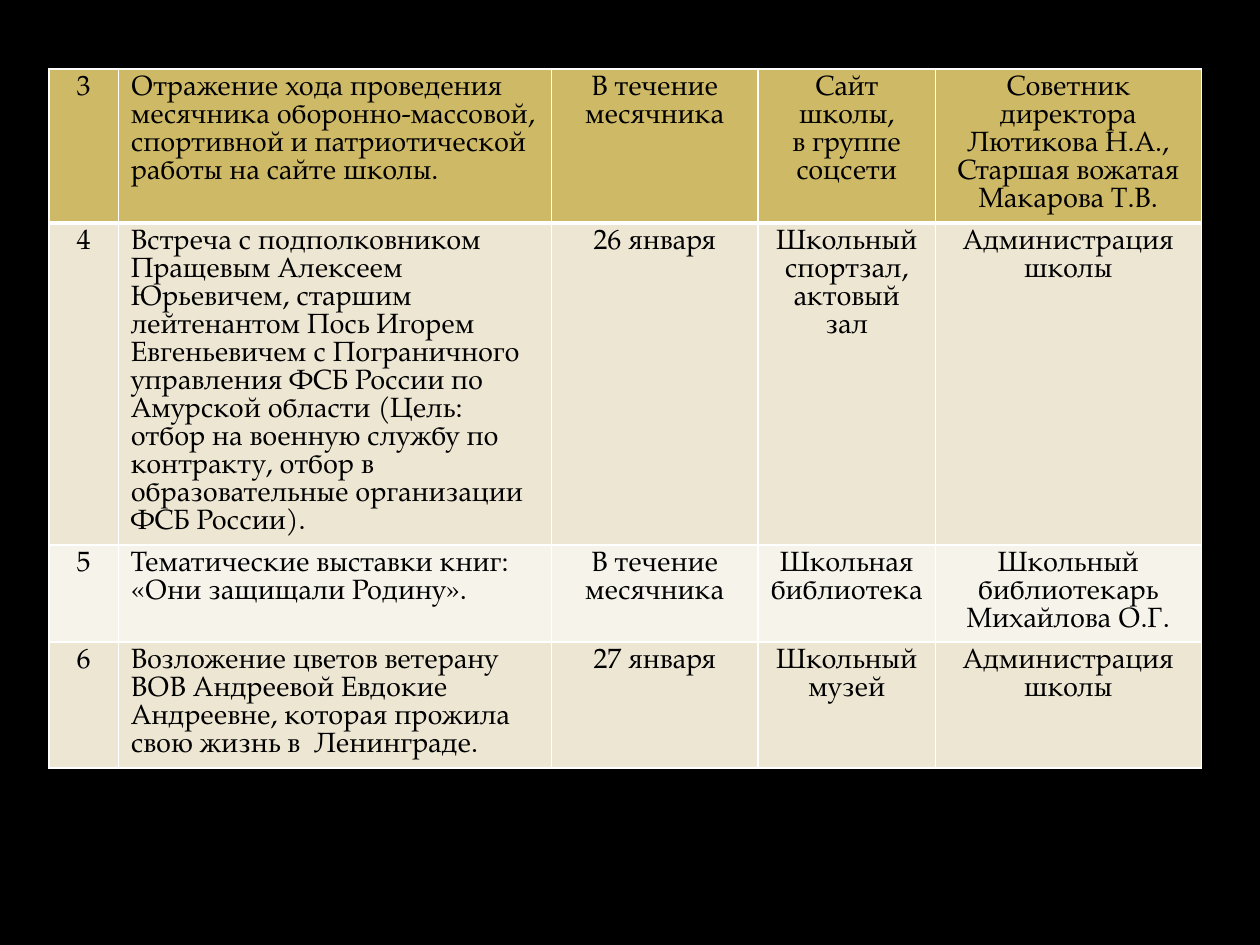
import pptx
import pptx.dml.color
import pptx.enum.text
import pptx.oxml
import pptx.oxml.ns
import pptx.util

Pt = pptx.util.Pt
RGB = pptx.dml.color.RGBColor.from_string
ALIGN = pptx.enum.text.PP_ALIGN

THEME = {
    "background": "000000",
    "border": "FFFFFF",
    "text": "000000",
    "row_fills": ["CEB966", "EDE6D3", "F6F3EA", "EDE6D3"],
    "font": "TeX Gyre Pagella",
    "size": 16,
    "thin": 1,
    "thick": 3,
}

# Each row: number, event, date, place, people in charge; "\n" starts a paragraph.
EVENTS = [
    ("3",
     "Отражение хода проведения месячника оборонно-массовой, спортивной "
     "и патриотической работы на сайте школы.",
     "В течение месячника",
     "Сайт школы,\nв группе\nсоцсети",
     "Советник директора\nЛютикова Н.А.,\nСтаршая вожатая\nМакарова Т.В."),
    ("4",
     "Встреча с подполковником Пращевым Алексеем Юрьевичем, старшим "
     "лейтенантом Пось Игорем Евгеньевичем с Пограничного управления ФСБ "
     "России по Амурской области (Цель: отбор на военную службу по "
     "контракту, отбор в образовательные организации ФСБ России).",
     "26 января",
     "Школьный спортзал,\nактовый зал",
     "Администрация школы"),
    ("5",
     "Тематические выставки книг:\n«Они защищали Родину».",
     "В течение месячника",
     "Школьная библиотека",
     "Школьный\nбиблиотекарь\nМихайлова О.Г."),
    ("6",
     "Возложение цветов ветерану ВОВ Андреевой Евдокие Андреевне, "
     "которая прожила свою жизнь в  Ленинграде.",
     "27 января",
     "Школьный музей",
     "Администрация школы"),
]
LEFT, TOP = 28.1, 39.4
COL_WIDTHS = [39.5, 247.5, 118.2, 101.2, 152]
ROW_HEIGHTS = [88, 184, 55.5, 72]
EVENT_COL = 1


def set_borders(cell, widths):
    """Draw cell borders; widths are in left, right, top, bottom order."""
    tc_pr = cell._tc.get_or_add_tcPr()
    for i, (side, width) in enumerate(zip("LRTB", widths)):
        tc_pr.insert(i, pptx.oxml.parse_xml(
            f'<a:ln{side} {pptx.oxml.ns.nsdecls("a")} w="{Pt(width)}">'
            f'<a:solidFill><a:srgbClr val="{THEME["border"]}"/></a:solidFill>'
            f'</a:ln{side}>'))


def write_cell(cell, text, align):
    tf = cell.text_frame
    tf.text = text
    font_format = {"name": THEME["font"], "size": Pt(THEME["size"]), "bold": False}
    for p in tf.paragraphs:
        p.alignment = align
        p.line_spacing = Pt(THEME["size"])
        for r in p.runs:
            for name, value in font_format.items():
                setattr(r.font, name, value)
            r.font.color.rgb = RGB(THEME["text"])


def add_events_table(slide):
    table = slide.shapes.add_table(
        len(EVENTS), len(COL_WIDTHS), Pt(LEFT), Pt(TOP),
        Pt(sum(COL_WIDTHS)), Pt(sum(ROW_HEIGHTS))).table
    table.first_row = table.horz_banding = False
    for col, width in zip(table.columns, COL_WIDTHS):
        col.width = Pt(width)
    for i, (row, height) in enumerate(zip(table.rows, ROW_HEIGHTS)):
        row.height = Pt(height)
        thin, thick = THEME["thin"], THEME["thick"]
        widths = (thin, thin, thick if i == 1 else thin, thick if i == 0 else thin)
        for j, text in enumerate(EVENTS[i]):
            cell = table.cell(i, j)
            cell.fill.solid()
            cell.fill.fore_color.rgb = RGB(THEME["row_fills"][i])
            set_borders(cell, widths)
            write_cell(cell, text, ALIGN.LEFT if j == EVENT_COL else ALIGN.CENTER)


def main():
    prs = pptx.Presentation()
    prs.slide_width, prs.slide_height = Pt(720), Pt(540)
    slide = prs.slides.add_slide(prs.slide_layouts[6])
    slide.background.fill.solid()
    slide.background.fill.fore_color.rgb = RGB(THEME["background"])
    add_events_table(slide)
    prs.save("out.pptx")


if __name__ == "__main__":
    main()
